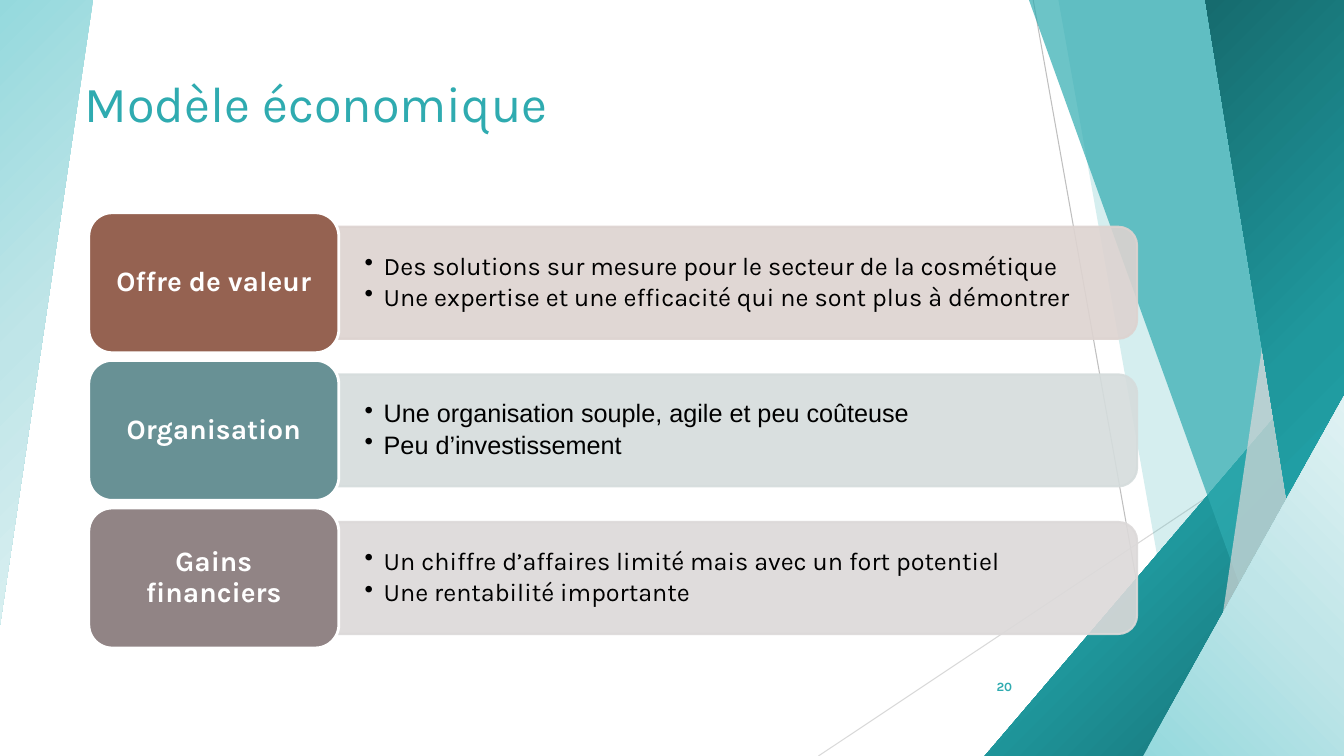
from dataclasses import dataclass

from lxml.etree import SubElement
from pptx import Presentation
from pptx.dml.color import RGBColor
from pptx.enum.shapes import MSO_CONNECTOR, MSO_SHAPE
from pptx.enum.text import MSO_ANCHOR, PP_ALIGN
from pptx.oxml import parse_xml
from pptx.oxml.ns import nsdecls, qn
from pptx.shapes.autoshape import Shape
from pptx.shapes.shapetree import SlideShapes
from pptx.text.text import TextFrame
from pptx.util import Pt

WIDTH, HEIGHT = 960, 540
KARLA, ARIAL = "Karla", "Arial"

TEAL = RGBColor(0x2F, 0xAB, 0xB0)
MIST = RGBColor(0xDC, 0xD9, 0xD9)
WHITE = RGBColor(0xFF, 0xFF, 0xFF)
BLACK = RGBColor(0x00, 0x00, 0x00)
GREY = RGBColor(0xBF, 0xBF, 0xBF)
PALE_GREY = RGBColor(0xD9, 0xD9, 0xD9)
BROWN = RGBColor(0x95, 0x62, 0x51)
PALE_BROWN = RGBColor(0xDD, 0xD3, 0xD0)
SLATE = RGBColor(0x68, 0x91, 0x95)
PALE_SLATE = RGBColor(0xD5, 0xDC, 0xDC)
TAUPE = RGBColor(0x91, 0x84, 0x85)

DARK_TEALS = (RGBColor(0x16, 0x6B, 0x6E), RGBColor(0x1F, 0x98, 0x9D), RGBColor(0x25, 0xB4, 0xBA))
LIGHT_TEALS = (RGBColor(0x95, 0xD9, 0xDD), RGBColor(0xBF, 0xE5, 0xE8), RGBColor(0xE0, 0xF2, 0xF3))
FROM_TOP_LEFT = '<a:path path="circle"><a:fillToRect r="100000" b="100000"/></a:path>'
FROM_BOTTOM_RIGHT = '<a:path path="circle"><a:fillToRect l="100000" t="100000"/></a:path>'

ROW_TOP, ROW_PITCH = 152, 105.45
CARD_LEFT, CARD_WIDTH, CARD_HEIGHT = 63.4, 178.6, 100
PANEL_LEFT, PANEL_WIDTH, PANEL_HEIGHT = 241.2, 571, 80
BULLET_INDENT = 13.7


@dataclass(frozen=True)
class Row:
    label: str
    points: tuple[str, ...]
    card: RGBColor
    panel: RGBColor
    font: str = KARLA


ROWS = (
    Row("Offre de valeur",
        ("Des solutions sur mesure pour le secteur de la cosmétique",
         "Une expertise et une efficacité qui ne sont plus à démontrer"),
        BROWN, PALE_BROWN),
    Row("Organisation",
        ("Une organisation souple, agile et peu coûteuse", "Peu d’investissement"),
        SLATE, PALE_SLATE, ARIAL),
    Row("Gains financiers",
        ("Un chiffre d’affaires limité mais avec un fort potentiel", "Une rentabilité importante"),
        TAUPE, MIST),
)


def set_opacity(shape: Shape, percent: int) -> None:
    for color in shape._element.spPr.iter(qn("a:srgbClr")):
        SubElement(color, qn("a:alpha"), val=str(percent * 1000))


def fill_gradient(shape: Shape, colors: tuple[RGBColor, ...], direction: str) -> None:
    stops = "".join(
        f'<a:gs pos="{index * 50000}"><a:srgbClr val="{color}"/></a:gs>'
        for index, color in enumerate(colors)
    )
    gradient = parse_xml(
        f'<a:gradFill {nsdecls("a")} rotWithShape="1"><a:gsLst>{stops}</a:gsLst>{direction}</a:gradFill>'
    )
    properties = shape._element.spPr
    geometry = properties.find(qn("a:prstGeom"))
    if geometry is None:
        geometry = properties.find(qn("a:custGeom"))
    geometry.addnext(gradient)


def linear(degrees: int) -> str:
    return f'<a:lin ang="{degrees * 60000}" scaled="0"/>'


def add_hairline(shapes: SlideShapes, start: tuple[float, float], end: tuple[float, float],
                 color: RGBColor) -> None:
    hairline = shapes.add_connector(MSO_CONNECTOR.STRAIGHT, *map(Pt, start + end))
    hairline.line.color.rgb = color
    hairline.line.width = Pt(0.75)
    SubElement(hairline._element.spPr, qn("a:effectLst"))


def add_facet(shapes: SlideShapes, top_x: float, bottom_x: float) -> Shape:
    """Add a full-height band from a slanted left edge to the slide's right edge."""
    builder = shapes.build_freeform(Pt(top_x), Pt(0))
    builder.add_line_segments(
        [(Pt(WIDTH), Pt(0)), (Pt(WIDTH), Pt(HEIGHT)), (Pt(bottom_x), Pt(HEIGHT))]
    )
    facet = builder.convert_to_shape()
    facet.shadow.inherit = False
    facet.line.fill.background()
    return facet


def add_tinted_facet(shapes: SlideShapes, top_x: float, bottom_x: float,
                     color: RGBColor, opacity: int) -> None:
    facet = add_facet(shapes, top_x, bottom_x)
    facet.fill.solid()
    facet.fill.fore_color.rgb = color
    set_opacity(facet, opacity)


def add_corner(shapes: SlideShapes, left: float, top: float, width: float, height: float,
               colors: tuple[RGBColor, ...], direction: str, rotation: int = 0) -> None:
    """Add a right-angled triangle that fills a corner of the slide."""
    corner = shapes.add_shape(MSO_SHAPE.ISOSCELES_TRIANGLE, Pt(left), Pt(top), Pt(width), Pt(height))
    corner.adjustments[0] = 1
    corner.rotation = rotation
    corner.shadow.inherit = False
    corner.line.fill.background()
    fill_gradient(corner, colors, direction)


def write(frame: TextFrame, lines: tuple[str, ...], size: float, color: RGBColor,
          font: str = KARLA, bold: bool = False, align: PP_ALIGN = PP_ALIGN.LEFT,
          spacing: float = 1, bulleted: bool = False) -> None:
    frame.word_wrap = True
    for index, line in enumerate(lines):
        paragraph = frame.paragraphs[0] if index == 0 else frame.add_paragraph()
        paragraph.text = line
        paragraph.alignment = align
        paragraph.line_spacing = spacing
        if bulleted:
            paragraph.space_after = Pt(3)
            properties = paragraph._p.get_or_add_pPr()
            properties.set("marL", str(Pt(BULLET_INDENT)))
            properties.set("indent", str(-Pt(BULLET_INDENT)))
            SubElement(properties, qn("a:buChar"), char="•")
        paragraph.font.name = font
        paragraph.font.size = Pt(size)
        paragraph.font.bold = bold
        paragraph.font.color.rgb = color


def set_margins(frame: TextFrame, across: float, down: float) -> None:
    frame.margin_left = frame.margin_right = Pt(across)
    frame.margin_top = frame.margin_bottom = Pt(down)
    frame.vertical_anchor = MSO_ANCHOR.MIDDLE


def add_row(shapes: SlideShapes, row: Row, top: float) -> None:
    middle = top + CARD_HEIGHT / 2
    # The panel stands upright before its quarter turn, so its sides are swapped.
    panel = shapes.add_shape(
        MSO_SHAPE.ROUND_2_SAME_RECTANGLE,
        Pt(PANEL_LEFT + (PANEL_WIDTH - PANEL_HEIGHT) / 2), Pt(middle - PANEL_WIDTH / 2),
        Pt(PANEL_HEIGHT), Pt(PANEL_WIDTH))
    panel.rotation = 90
    panel.shadow.inherit = False
    panel.fill.solid()
    panel.fill.fore_color.rgb = row.panel
    panel.line.color.rgb = row.panel
    panel.line.width = Pt(1.5)
    set_opacity(panel, 90)

    points = shapes.add_textbox(Pt(PANEL_LEFT), Pt(middle - 36.4), Pt(567.4), Pt(72.8)).text_frame
    set_margins(points, 19.2, 9.6)
    write(points, row.points, 18, BLACK, row.font, spacing=0.9, bulleted=True)

    card = shapes.add_shape(MSO_SHAPE.ROUNDED_RECTANGLE, Pt(CARD_LEFT), Pt(top),
                            Pt(CARD_WIDTH), Pt(CARD_HEIGHT))
    card.shadow.inherit = False
    card.fill.solid()
    card.fill.fore_color.rgb = row.card
    card.line.color.rgb = WHITE
    card.line.width = Pt(2)
    set_margins(card.text_frame, 6, 3)
    write(card.text_frame, (row.label,), 20, WHITE, bold=True, align=PP_ALIGN.CENTER, spacing=0.9)


def add_backdrop(shapes: SlideShapes) -> None:
    add_hairline(shapes, (738, 0), (834, HEIGHT), GREY)
    add_hairline(shapes, (WIDTH, 290), (584.6, HEIGHT), PALE_GREY)
    add_tinted_facet(shapes, 756, 852, TEAL, 20)
    add_corner(shapes, 703.4, 240, 256.6, 300, DARK_TEALS, FROM_BOTTOM_RIGHT)
    add_tinted_facet(shapes, 735, 929.5, TEAL, 70)
    add_tinted_facet(shapes, 938, 858.5, MIST, 70)
    fill_gradient(add_facet(shapes, 861, 949), DARK_TEALS, FROM_TOP_LEFT)
    add_corner(shapes, 816.6, 283, 143.4, 257, LIGHT_TEALS, linear(315))
    add_corner(shapes, 0, 0, 66.4, 446.4, LIGHT_TEALS, linear(225), rotation=180)


def main() -> None:
    deck = Presentation()
    deck.slide_width, deck.slide_height = Pt(WIDTH), Pt(HEIGHT)
    shapes = deck.slides.add_slide(deck.slide_layouts[6]).shapes
    add_backdrop(shapes)

    title = shapes.add_textbox(Pt(53.5), Pt(48.2), Pt(676.8), Pt(103.7)).text_frame
    write(title, ("Modèle économique",), 36, TEAL)
    page_number = shapes.add_textbox(Pt(676), Pt(476), Pt(54), Pt(28.8)).text_frame
    page_number.vertical_anchor = MSO_ANCHOR.MIDDLE
    write(page_number, ("20",), 9, TEAL, bold=True, align=PP_ALIGN.RIGHT)

    for index, row in enumerate(ROWS):
        add_row(shapes, row, ROW_TOP + index * ROW_PITCH)
    deck.save("out.pptx")


if __name__ == "__main__":
    main()
